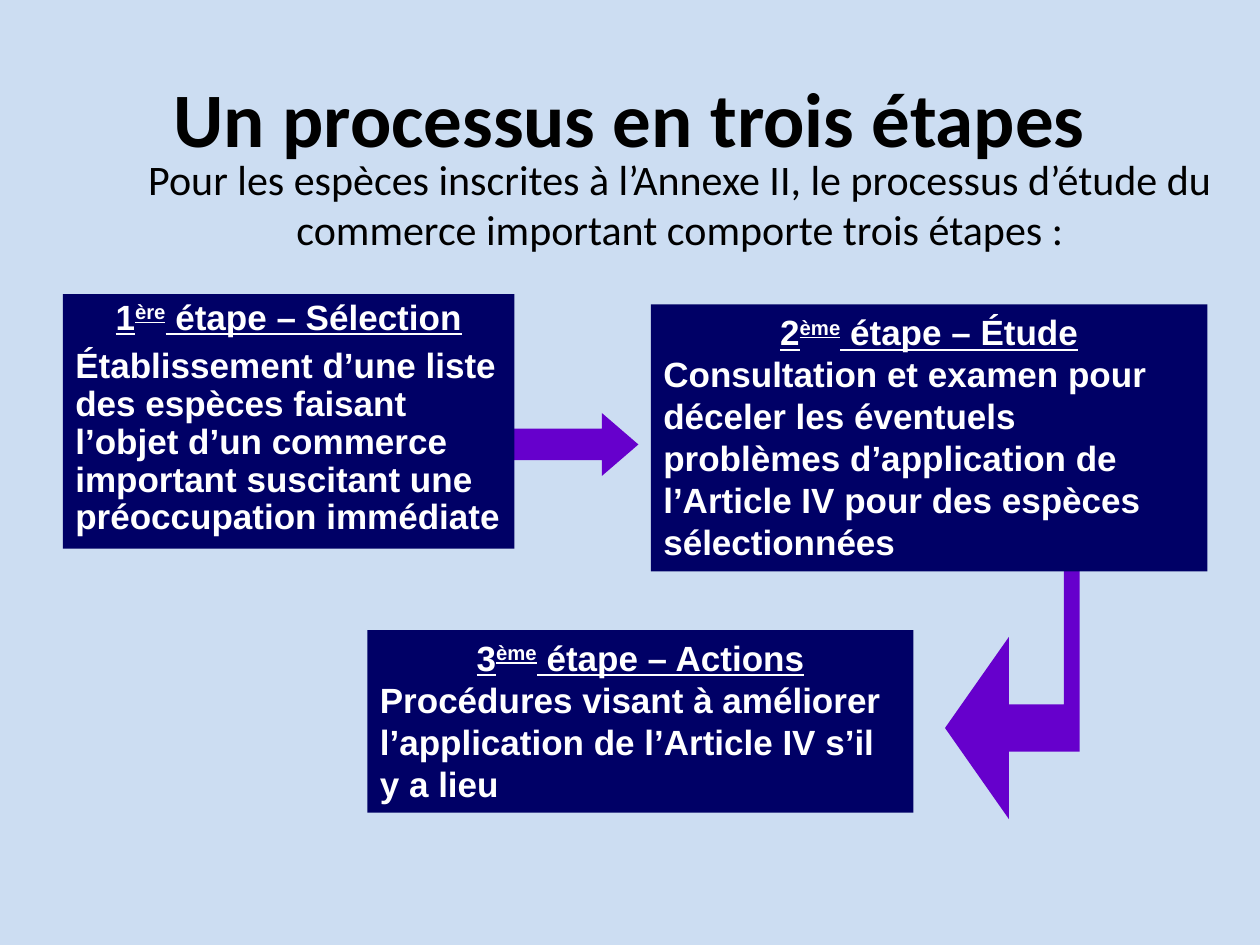
import pptx
import pptx.dml.color
import pptx.enum.shapes
import pptx.enum.text
import pptx.util

Pt = pptx.util.Pt
ALIGN = pptx.enum.text.PP_ALIGN
ANCHOR = pptx.enum.text.MSO_ANCHOR
SHAPE = pptx.enum.shapes.MSO_SHAPE

BACKGROUND = "CCDDF2"
NAVY = "000066"
PURPLE = "6600CC"
BLACK = "000000"
WHITE = "FFFFFF"

# Number, ordinal ending, name, description, box, line spacing, space after
STEPS = [
    ("1", "ère", "Sélection",
     "Établissement d’une liste des espèces faisant l’objet d’un commerce "
     "important suscitant une préoccupation immédiate",
     (36, 168, 258, 145.5), 0.9, 6),
    ("2", "ème", "Étude",
     "Consultation et examen pour déceler les éventuels problèmes "
     "d’application de l’Article IV pour des espèces sélectionnées",
     (372, 174, 318, 152.6), 1.0, 0),
    ("3", "ème", "Actions",
     "Procédures visant à améliorer l’application de l’Article IV s’il y a lieu",
     (210, 360, 312, 104.4), 1.0, 0),
]

BENT_ARROW = [
    (612.5, 198), (595.5, 308), (608, 308), (608, 402.5), (576.5, 402.5),
    (576.5, 364), (540, 416), (576.5, 468), (576.5, 429.5), (617, 429.5),
    (617, 308), (630, 308),
]


def color(value):
    return pptx.dml.color.RGBColor.from_string(value)


def paint(shape, fill):
    """Give a shape a flat fill with no outline and no shadow."""
    shape.shadow.inherit = False
    shape.fill.solid()
    shape.fill.fore_color.rgb = color(fill)
    shape.line.fill.background()


def set_font(paragraph, name, size, value, bold):
    font = paragraph.font
    font.name = name
    font.size = Pt(size)
    font.bold = bold
    font.color.rgb = color(value)


def add_text(slide, box, text, size, bold, anchor, left_margin=7.2):
    """Add a centred line of black text."""
    frame = slide.shapes.add_textbox(*map(Pt, box)).text_frame
    frame.word_wrap = True
    frame.vertical_anchor = anchor
    frame.margin_left = Pt(left_margin)
    paragraph = frame.paragraphs[0]
    paragraph.text = text
    paragraph.alignment = ALIGN.CENTER
    set_font(paragraph, "Calibri", size, BLACK, bold)


def add_step(slide, number, ending, name, description, box, spacing, after):
    shape = slide.shapes.add_shape(SHAPE.RECTANGLE, *map(Pt, box))
    paint(shape, NAVY)
    frame = shape.text_frame
    frame.word_wrap = True
    frame.vertical_anchor = ANCHOR.TOP
    frame.auto_size = pptx.enum.text.MSO_AUTO_SIZE.SHAPE_TO_FIT_TEXT

    heading = frame.paragraphs[0]
    for text in (number, ending, f" étape – {name}"):
        run = heading.add_run()
        run.text = text
        if text == ending:
            run.font._element.set("baseline", "30000")
    body = frame.add_paragraph()
    body.text = description

    for paragraph, alignment in ((heading, ALIGN.CENTER), (body, ALIGN.LEFT)):
        paragraph.alignment = alignment
        paragraph.line_spacing = spacing
        paragraph.space_after = Pt(after)
        set_font(paragraph, "Arial", 20, WHITE, True)
    heading.font.underline = True


def add_right_arrow(slide, box):
    arrow = slide.shapes.add_shape(SHAPE.RIGHT_ARROW, *map(Pt, box))
    arrow.adjustments[1] = 0.58
    paint(arrow, PURPLE)


def add_outline(slide, points):
    start, *others = [(Pt(x), Pt(y)) for x, y in points]
    builder = slide.shapes.build_freeform(*start)
    builder.add_line_segments(others, close=True)
    paint(builder.convert_to_shape(), PURPLE)


def main():
    presentation = pptx.Presentation()
    presentation.slide_width = Pt(720)
    presentation.slide_height = Pt(540)
    slide = presentation.slides.add_slide(presentation.slide_layouts[6])
    slide.background.fill.solid()
    slide.background.fill.fore_color.rgb = color(BACKGROUND)

    add_right_arrow(slide, (280.8, 236, 84, 36))
    add_outline(slide, BENT_ARROW)
    add_text(slide, (30, 84, 690, 66),
             "Pour les espèces inscrites à l’Annexe II, le processus d’étude du "
             "commerce important comporte trois étapes :",
             24, False, ANCHOR.TOP, left_margin=34.2)
    add_text(slide, (36, 21.6, 648, 90), "Un processus en trois étapes",
             44, True, ANCHOR.MIDDLE)
    for step in STEPS:
        add_step(slide, *step)

    presentation.save("out.pptx")


if __name__ == "__main__":
    main()
